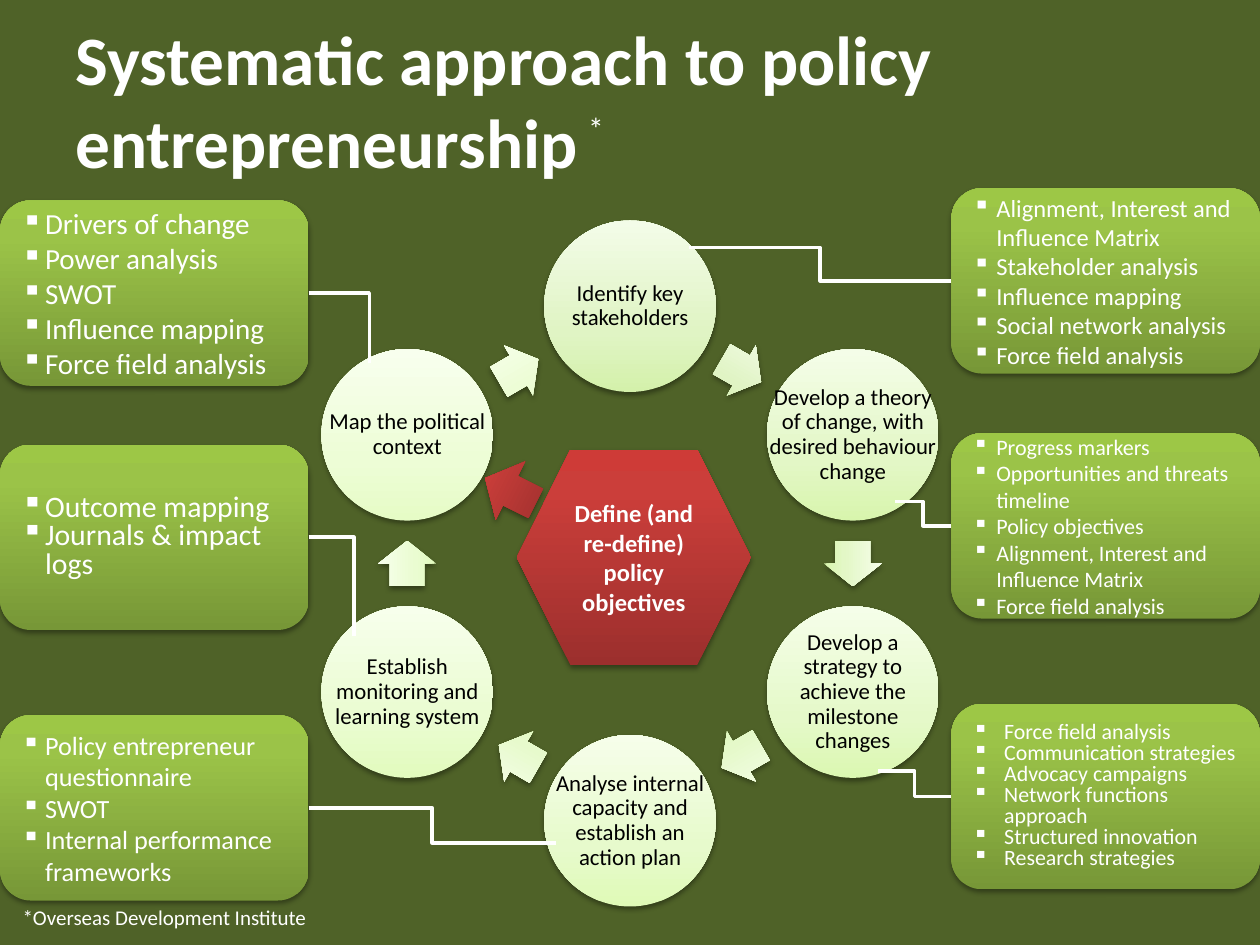
import math

import lxml.etree
import pptx
import pptx.dml.color
import pptx.enum.shapes
import pptx.enum.text
import pptx.oxml.ns
import pptx.util

Pt = pptx.util.Pt
RGB = pptx.dml.color.RGBColor.from_string
SHAPE = pptx.enum.shapes.MSO_SHAPE
ALIGN = pptx.enum.text.PP_ALIGN
MIDDLE = pptx.enum.text.MSO_ANCHOR.MIDDLE
qn = pptx.oxml.ns.qn

theme = {
    "font": "Calibri",
    "background": "4F6228",
    "light": "FFFFFF",
    "dark": "000000",
    "card": [(0, "779737"), (80, "9BC348"), (100, "9DC746")],
    "goal": [(0, "9C2F2D"), (80, "CB3E3A"), (100, "CE3B37")],
    "title_size": 39.6,
    "step_size": 13,
    "goal_size": 14,
    "footnote_size": 12,
    "asterisk_size": 18,
}


def set_font(paragraph, size, color, bold=False):
    paragraph.font.name = theme["font"]
    paragraph.font.size = Pt(size)
    paragraph.font.bold = bold
    paragraph.font.color.rgb = RGB(color)


def add_shaded(kind, left, top, width, height, stops, rotation=0):
    shape = slide.shapes.add_shape(kind, Pt(left), Pt(top), Pt(width), Pt(height))
    shape.rotation = rotation
    shape.line.fill.background()
    shape.fill.gradient()
    shape.fill.gradient_angle = 90
    stop_list = shape.fill._fill._gradFill.find(qn("a:gsLst"))
    for old_stop in list(stop_list):
        stop_list.remove(old_stop)
    for position, color in stops:
        stop = lxml.etree.SubElement(stop_list, qn("a:gs"), pos=str(position * 1000))
        lxml.etree.SubElement(stop, qn("a:srgbClr"), val=color)
    shape.shadow.inherit = False
    effects = shape._element.spPr.find(qn("a:effectLst"))
    shadow = lxml.etree.SubElement(
        effects, qn("a:outerShdw"), blurRad=str(Pt(3.1)), dist=str(Pt(1.7)),
        dir="5400000", rotWithShape="0")
    shade = lxml.etree.SubElement(shadow, qn("a:srgbClr"), val=theme["dark"])
    lxml.etree.SubElement(shade, qn("a:alpha"), val="36000")
    return shape


deck = pptx.Presentation()
deck.slide_width, deck.slide_height = Pt(720), Pt(540)
slide = deck.slides.add_slide(deck.slide_layouts[5])
slide.background.fill.solid()
slide.background.fill.fore_color.rgb = RGB(theme["background"])

title = slide.shapes.title
title.left, title.top, title.width, title.height = Pt(36), Pt(11.5), Pt(648), Pt(90)
title.text_frame.text = "Systematic approach to policy entrepreneurship"
title.text_frame.vertical_anchor = MIDDLE
title.text_frame.paragraphs[0].alignment = ALIGN.LEFT
set_font(title.text_frame.paragraphs[0], theme["title_size"], theme["light"], True)

steps = [
    ("Identify key stakeholders", ("D4F1AB", "E0F4C4", "F3FCE8")),
    ("Develop a theory of change, with desired behaviour change", ("D8F5AD", "E3F7C6", "F4FDE8")),
    ("Develop a strategy to achieve the milestone changes", ("DBF8B2", "E5F9C9", "F5FEE9")),
    ("Analyse internal capacity and establish an action plan", ("DFFAB7", "E7FACC", "F6FEEA")),
    ("Establish monitoring and learning system", ("E2FBBE", "EAFCD1", "F7FFEC")),
    ("Map the political context", ("E6FCC6", "EDFDD6", "F8FFEE")),
]
center_x, center_y, radius, diameter = 360, 322, 147, 98
arrow_length, arrow_width = 26, 33
arrow_radius = radius * math.cos(math.radians(30))

for index, (label, colors) in enumerate(steps):
    stops = list(zip((0, 35, 100), colors))
    angle = math.radians(60 * index - 90)
    left = center_x + radius * math.cos(angle) - diameter / 2
    top = center_y + radius * math.sin(angle) - diameter / 2
    add_shaded(SHAPE.OVAL, left, top, diameter, diameter, stops)

    caption = slide.shapes.add_textbox(Pt(left), Pt(top), Pt(diameter), Pt(diameter)).text_frame
    caption.word_wrap = True
    caption.vertical_anchor = MIDDLE
    caption.margin_left = caption.margin_right = Pt(1.3)
    caption.margin_top = caption.margin_bottom = Pt(1.3)
    caption.text = label
    caption.paragraphs[0].alignment = ALIGN.CENTER
    caption.paragraphs[0].line_spacing = 0.9
    set_font(caption.paragraphs[0], theme["step_size"], theme["dark"])

    between = angle + math.radians(30)
    arrow = add_shaded(
        SHAPE.RIGHT_ARROW,
        center_x + arrow_radius * math.cos(between) - arrow_length / 2,
        center_y + arrow_radius * math.sin(between) - arrow_width / 2,
        arrow_length, arrow_width, stops, 30 + 60 * index)
    arrow.adjustments[0] = 0.6

card_width, card_height = 176.4, 106
left_card, right_card = 0, 720 - card_width
cards = [
    (left_card, 114.5, 16.6, 1, 13.5, (211, 207.4), "bentConnector2",
     ["Drivers of change", "Power analysis", "SWOT", "Influence mapping",
      "Force field analysis"]),
    (left_card, 254, 17, 0.8, 13.5, (202.3, 363.6), "bentConnector2",
     ["Outcome mapping", "Journals & impact logs"]),
    (left_card, 408.6, 15, 1, 13.5, (317.5, 481.7), "bentConnector3",
     ["Policy entrepreneur questionnaire", "SWOT", "Internal performance frameworks"]),
    (right_card, 402.2, 12.5, 0.8, 18, (501.8, 440.6), "bentConnector3",
     ["Force field analysis", "Communication strategies", "Advocacy campaigns",
      "Network functions approach", "Structured innovation", "Research strategies"]),
    (right_card, 247.5, 12.6, 1, 13.5, (511.2, 286.6), "bentConnector3",
     ["Progress markers", "Opportunities and threats timeline", "Policy objectives",
      "Alignment, Interest and Influence Matrix", "Force field analysis"]),
    (right_card, 107.5, 14, 1, 13.5, (393.8, 141.5), "bentConnector3",
     ["Alignment, Interest and Influence Matrix", "Stakeholder analysis",
      "Influence mapping", "Social network analysis", "Force field analysis"]),
]
for left, top, size, spacing, indent, target, bend, tools in cards:
    card = add_shaded(SHAPE.ROUNDED_RECTANGLE, left, top, card_width, card_height, theme["card"])
    card.text_frame.vertical_anchor = MIDDLE
    card.text_frame.text = "\n".join(tools)
    for tool in card.text_frame.paragraphs:
        tool.alignment = ALIGN.LEFT
        tool.line_spacing = spacing
        properties = tool._p.get_or_add_pPr()
        properties.set("marL", str(Pt(indent)))
        properties.set("indent", str(-Pt(indent)))
        lxml.etree.SubElement(properties, qn("a:buChar"), char="▪")
        set_font(tool, size, theme["light"])

    inner_edge = card_width if left == left_card else right_card
    link = slide.shapes.add_connector(
        pptx.enum.shapes.MSO_CONNECTOR.ELBOW,
        Pt(inner_edge), Pt(top + card_height / 2), Pt(target[0]), Pt(target[1]))
    link.line.color.rgb = RGB(theme["light"])
    link.line.width = Pt(2)
    link._element.spPr.find(qn("a:prstGeom")).set("prst", bend)
    lxml.etree.SubElement(link._element.spPr, qn("a:effectLst"))

goal = add_shaded(SHAPE.HEXAGON, 295.2, 257, 134, 123, theme["goal"])
goal.text_frame.vertical_anchor = MIDDLE
goal.text_frame.text = "Define (and re-define) policy objectives"
goal.text_frame.paragraphs[0].alignment = ALIGN.CENTER
set_font(goal.text_frame.paragraphs[0], theme["goal_size"], theme["light"], True)
add_shaded(SHAPE.UP_ARROW, 273, 264.2, 37.4, 32.4, theme["goal"], 296.6)

notes = [
    ("*Overseas Development Institute", 5.8, 513.4, 178.6, 21.6, theme["footnote_size"]),
    ("*", 329, 59, 23.8, 28.8, theme["asterisk_size"]),
]
for wording, left, top, width, height, size in notes:
    note = slide.shapes.add_textbox(Pt(left), Pt(top), Pt(width), Pt(height)).text_frame
    note.word_wrap = False
    note.auto_size = pptx.enum.text.MSO_AUTO_SIZE.SHAPE_TO_FIT_TEXT
    note.text = wording
    set_font(note.paragraphs[0], size, theme["light"])

deck.save("out.pptx")
